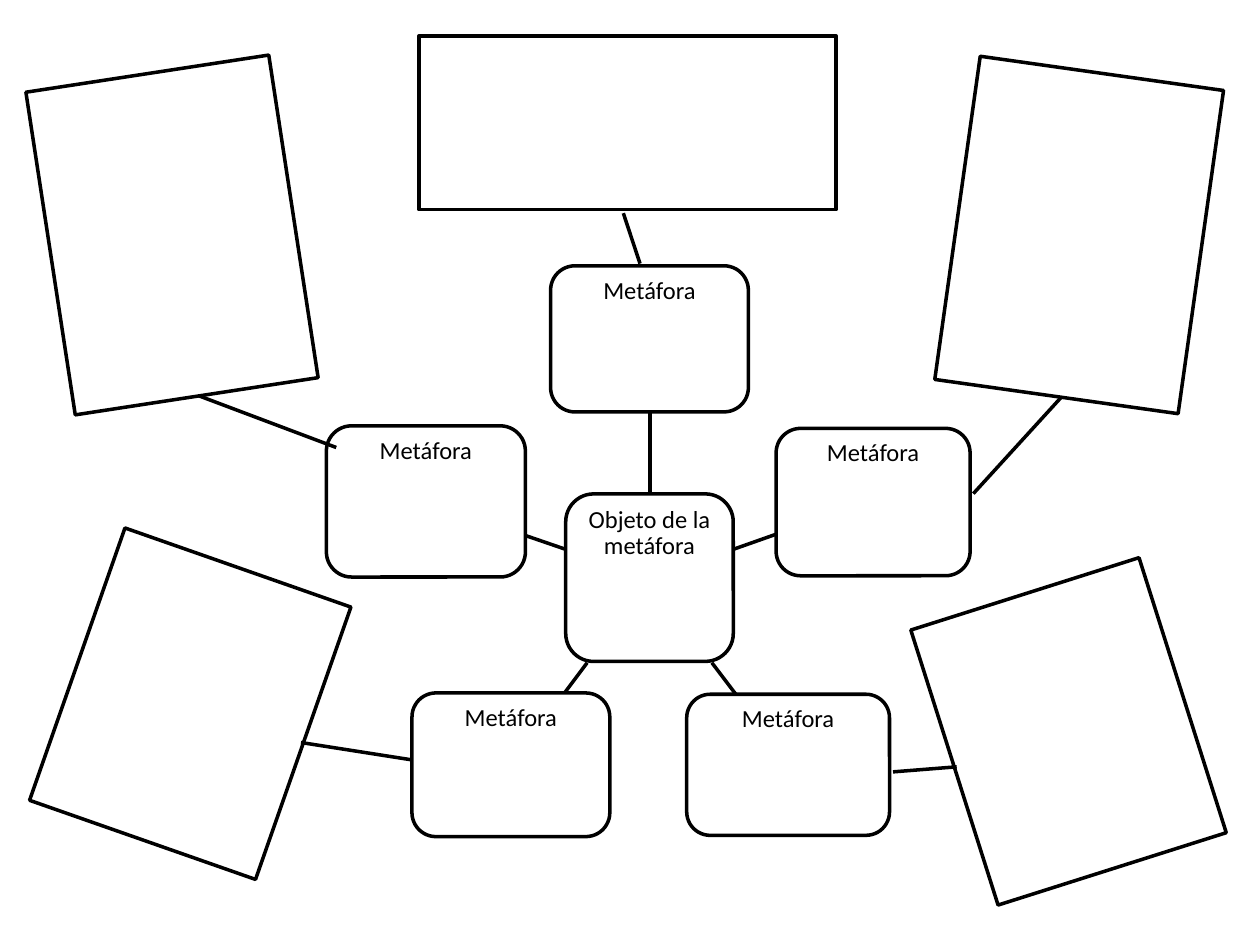
from dataclasses import dataclass

from lxml.etree import SubElement
from pptx import Presentation
from pptx.dml.color import RGBColor
from pptx.enum.shapes import MSO_CONNECTOR, MSO_SHAPE
from pptx.enum.text import MSO_ANCHOR, PP_ALIGN
from pptx.oxml.ns import qn
from pptx.util import Inches, Pt


@dataclass(frozen=True)
class Theme:
    paper: RGBColor = RGBColor(255, 255, 255)
    ink: RGBColor = RGBColor(0, 0, 0)
    font: str = "Calibri"
    text_size: Pt = Pt(14)
    outline: Pt = Pt(2)


theme = Theme()


def add_outlined_shape(slide, kind, bounds):
    shape = slide.shapes.add_shape(kind, *map(Inches, bounds))
    shape.shadow.inherit = False
    shape.fill.solid()
    shape.fill.fore_color.rgb = theme.paper
    shape.line.color.rgb = theme.ink
    shape.line.width = theme.outline
    return shape


def add_labelled_box(slide, bounds, label):
    shape = add_outlined_shape(slide, MSO_SHAPE.ROUNDED_RECTANGLE, bounds)
    frame = shape.text_frame
    frame.word_wrap = True
    frame.vertical_anchor = MSO_ANCHOR.TOP
    frame.margin_left = frame.margin_right = Inches(0.04)
    frame.margin_top = frame.margin_bottom = Inches(0.04)
    paragraph = frame.paragraphs[0]
    paragraph.alignment = PP_ALIGN.CENTER
    paragraph.line_spacing = 0.9
    run = paragraph.add_run()
    run.text = label
    run.font.name = theme.font
    run.font.size = theme.text_size
    run.font.color.rgb = theme.ink


presentation = Presentation()
presentation.slide_width = Inches(10)
presentation.slide_height = Inches(7.5)
slide = presentation.slides.add_slide(presentation.slide_layouts[6])

add_labelled_box(slide, (4.49, 3.92, 1.33, 1.33), "Objeto de la metáfora")

metaphors = [
    ((4.37, 2.11, 1.57, 1.16), (5.16, 3.92, 5.16, 3.27)),
    ((6.16, 3.4, 1.54, 1.17), (5.82, 4.36, 6.16, 4.24)),
    ((5.45, 5.51, 1.61, 1.12), (5.65, 5.26, 5.84, 5.51)),
    ((3.27, 5.5, 1.57, 1.14), (4.66, 5.26, 4.48, 5.5)),
    ((2.59, 3.38, 1.58, 1.2), (4.49, 4.36, 4.17, 4.25)),
]
for bounds, ends in metaphors:
    connector = slide.shapes.add_connector(MSO_CONNECTOR.STRAIGHT, *map(Inches, ends))
    connector.line.color.rgb = theme.ink
    connector.line.width = theme.outline
    SubElement(connector._element.spPr, qn("a:effectLst"))
    add_labelled_box(slide, bounds, "Metáfora")

callouts = [
    ((0.07, 0.89, 2.59, 1.95), 261.3, False, (0.51, 0, 1.03, -0.22)),
    ((0.56, 4.44, 1.9, 2.29), 19.3, True, (0.5, 0.01, 0.57, -0.45)),
    ((7.27, 0.89, 2.59, 1.95), 278, False, (0.52, 0, 0.22, -0.33)),
    ((7.53, 4.66, 1.9, 2.29), 162.4, True, (0.5, 0.01, 0.45, -0.25)),
    ((4.29, -0.68, 1.38, 3.31), 90, True, (0.49, -0.02, 0.53, -0.31)),
]
for bounds, rotation, flipped, pointer in callouts:
    callout = add_outlined_shape(slide, MSO_SHAPE.LINE_CALLOUT_1, bounds)
    callout.rotation = rotation
    for index, value in enumerate(pointer):
        callout.adjustments[index] = value
    if flipped:
        transform = callout._element.spPr.find(qn("a:xfrm"))
        transform.set("flipH", "1")
        transform.set("flipV", "1")

presentation.save("out.pptx")
